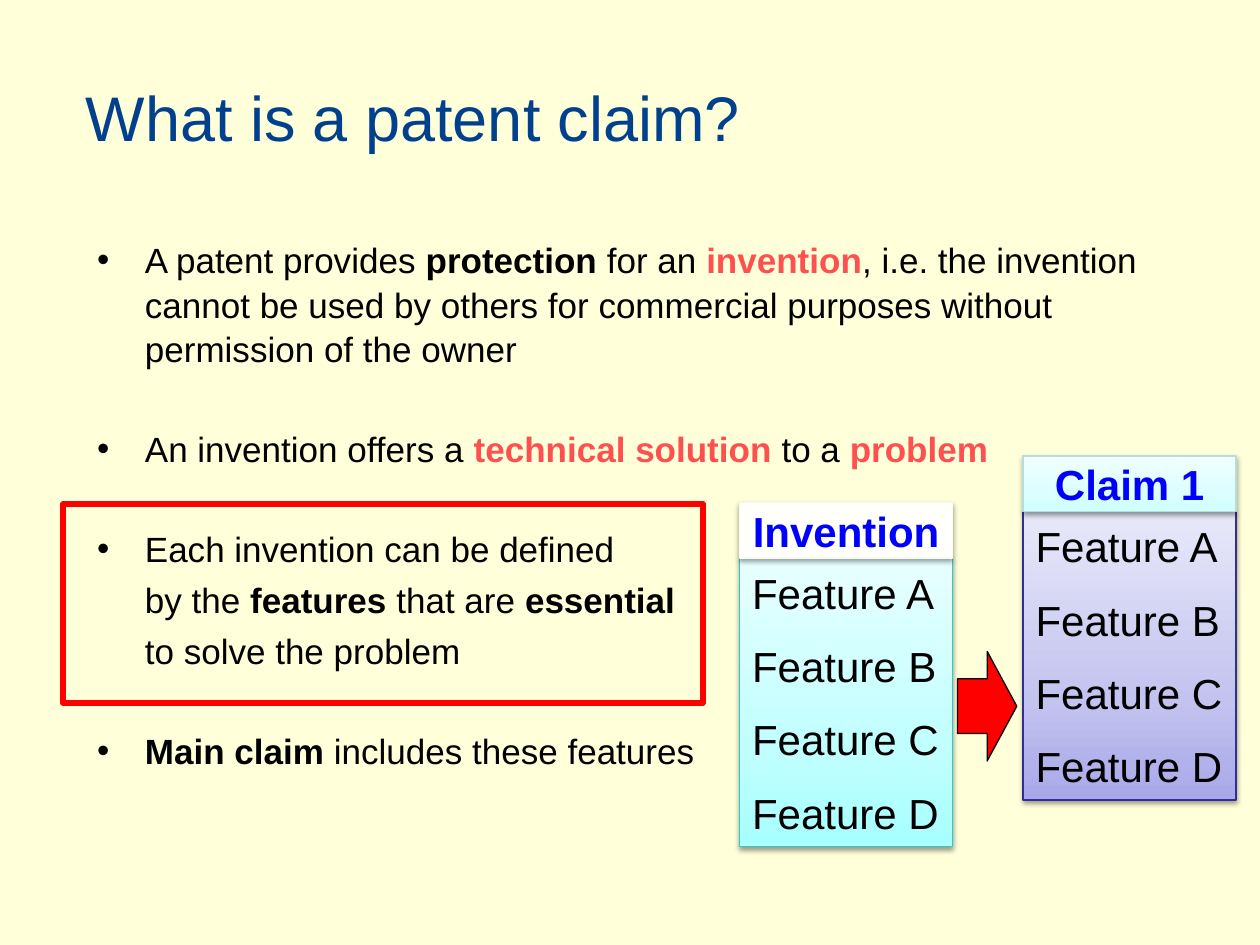
"""Build the slide that explains what a patent claim is."""
from lxml.etree import SubElement
from pptx import Presentation
from pptx.dml.color import RGBColor
from pptx.enum.shapes import MSO_SHAPE as Shape
from pptx.enum.text import MSO_ANCHOR as Anchor, MSO_AUTO_SIZE as AutoSize, PP_ALIGN as Align
from pptx.oxml import parse_xml
from pptx.oxml.ns import nsdecls, qn
from pptx.util import Inches, Pt

FONT = "Arial"
CREAM = RGBColor(0xFF, 0xFF, 0xD9)
NAVY = RGBColor(0x00, 0x40, 0x8C)
BLACK = RGBColor(0x00, 0x00, 0x00)
CORAL = RGBColor(0xFF, 0x50, 0x50)
RED = RGBColor(0xFF, 0x00, 0x00)
BLUE = RGBColor(0x00, 0x00, 0xFF)
VIOLET_EDGE = RGBColor(0x2F, 0x2F, 0x98)
ICE_EDGE = RGBColor(0xB6, 0xDC, 0xDF)
CYAN_EDGE = RGBColor(0x2E, 0xCB, 0xCB)
IVORY_EDGE = RGBColor(0xFA, 0xFA, 0xF1)

TITLE = "What is a patent claim?"
PLAIN, BOLD, KEY = (False, BLACK), (True, BLACK), (True, CORAL)
POINTS = [
    (True, [("A patent provides ", PLAIN), ("protection", BOLD), (" for an ", PLAIN),
            ("invention", KEY),
            (", i.e. the invention cannot be used by others for commercial purposes "
             "without permission of the owner", PLAIN)]),
    (True, [("An invention offers a ", PLAIN), ("technical solution", KEY),
            (" to a ", PLAIN), ("problem", KEY)]),
    (True, [("Each invention can be defined", PLAIN)]),
    (False, [("by the ", PLAIN), ("features ", BOLD), ("that are ", PLAIN),
             ("essential", BOLD)]),
    (False, [("to solve the problem", PLAIN)]),
    (True, [("Main claim ", BOLD), ("includes these features", PLAIN)]),
]
FEATURES = ["Feature A", "Feature B", "Feature C", "Feature D"]
CARD_WIDTH, HEADER_HEIGHT, LIST_HEIGHT = 1.69, 0.44, 2.29
CARDS = [
    {"heading": "Claim 1", "left": 8.12, "top": 3.62, "angle": 90,
     "header": ([(0, "F0FFFF"), (65, "DDFEFF"), (100, "CFFFFF")], ICE_EDGE),
     "list": ([(0, "E8E8FA"), (65, "C3C3EF"), (100, "A8A8EA")], VIOLET_EDGE)},
    {"heading": "Invention", "left": 5.87, "top": 3.99, "angle": 270,
     "header": ([(0, "FFFFFB"), (35, "FFFFFC"), (100, "FFFFFE")], IVORY_EDGE),
     "list": ([(0, "A7FFFF"), (35, "C1FFFF"), (100, "E7FFFF")], CYAN_EDGE)},
]


def place(shape, left, top, width, height):
    shape.left, shape.top = Inches(left), Inches(top)
    shape.width, shape.height = Inches(width), Inches(height)


def style(font, size, color, bold=False):
    font.name, font.size, font.bold = FONT, Pt(size), bold
    font.color.rgb = color


def outline(shape, color, width):
    shape.line.color.rgb = color
    shape.line.width = Pt(width)


def shade(panel, stops, angle):
    marks = "".join(f'<a:gs pos="{at * 1000}"><a:srgbClr val="{color}"/></a:gs>'
                    for at, color in stops)
    gradient = parse_xml(f'<a:gradFill {nsdecls("a")} rotWithShape="1"><a:gsLst>{marks}</a:gsLst>'
                         f'<a:lin ang="{angle * 60000}" scaled="0"/></a:gradFill>')
    panel._element.spPr.find(qn("a:prstGeom")).addnext(gradient)


def cast_shadow(panel):
    panel._element.spPr.append(parse_xml(
        f'<a:effectLst {nsdecls("a")}><a:outerShdw blurRad="{Pt(3.1)}" dist="{Pt(1.6)}" '
        'dir="5400000" rotWithShape="0"><a:srgbClr val="000000"><a:alpha val="38000"/>'
        '</a:srgbClr></a:outerShdw></a:effectLst>'))


def add_panel(group, box, look, angle, lines, align, color, bold):
    panel = group.shapes.add_shape(Shape.RECTANGLE, *map(Inches, box))
    stops, edge = look
    shade(panel, stops, angle)
    outline(panel, edge, 0.75)
    cast_shadow(panel)
    frame = panel.text_frame
    frame.text = "\n".join(lines)
    frame.word_wrap = False
    frame.vertical_anchor = Anchor.MIDDLE
    for index, paragraph in enumerate(frame.paragraphs):
        paragraph.alignment = align
        paragraph.space_before = Pt(13 if index else 0)
        for run in paragraph.runs:
            style(run.font, 24, color, bold)


def add_card(slide, card):
    group = slide.shapes.add_group_shape()
    left, top, angle = card["left"], card["top"], card["angle"]
    add_panel(group, (left, top + HEADER_HEIGHT, CARD_WIDTH, LIST_HEIGHT), card["list"],
              angle, FEATURES, Align.LEFT, BLACK, False)
    add_panel(group, (left, top, CARD_WIDTH, HEADER_HEIGHT), card["header"],
              angle, [card["heading"]], Align.CENTER, BLUE, True)


def fill_title(title):
    place(title, 0.58, 0.3, 9, 1.25)
    title.text_frame.text = TITLE
    title.text_frame.vertical_anchor = Anchor.MIDDLE
    heading = title.text_frame.paragraphs[0]
    heading.alignment = Align.LEFT
    style(heading.runs[0].font, 36, NAVY)


def fill_points(body):
    place(body, 0.67, 1.83, 9.08, 4.56)
    frame = body.text_frame
    frame.auto_size = AutoSize.NONE
    for index, (bulleted, parts) in enumerate(POINTS):
        paragraph = frame.add_paragraph() if index else frame.paragraphs[0]
        properties = paragraph._p.get_or_add_pPr()
        properties.set("marL", str(Inches(0.38)))
        properties.set("indent", str(-Inches(0.38) if bulleted else 0))
        if bulleted:
            SubElement(properties, qn("a:buChar")).set("char", "•")
        else:
            SubElement(properties, qn("a:buNone"))
        paragraph.line_spacing = 1.05
        paragraph.space_before = Pt(0 if index == 0 else 32 if bulleted else 4)
        for text, (bold, color) in parts:
            run = paragraph.add_run()
            run.text = text
            style(run.font, 20, color, bold)


def main():
    deck = Presentation()
    deck.slide_width, deck.slide_height = Inches(10), Inches(7.5)
    slide = deck.slides.add_slide(deck.slide_layouts[1])
    slide.background.fill.solid()
    slide.background.fill.fore_color.rgb = CREAM
    fill_title(slide.shapes.title)
    fill_points(slide.placeholders[1])

    claim, invention = CARDS
    add_card(slide, claim)
    frame = slide.shapes.add_shape(Shape.RECTANGLE, *map(Inches, (0.5, 4, 5.08, 1.58)))
    frame.shadow.inherit = False
    frame.fill.background()
    outline(frame, RED, 3)
    add_card(slide, invention)
    arrow = slide.shapes.add_shape(Shape.RIGHT_ARROW, *map(Inches, (7.6, 5.17, 0.47, 0.87)))
    arrow.shadow.inherit = False
    arrow.fill.solid()
    arrow.fill.fore_color.rgb = RED
    outline(arrow, BLACK, 0.75)
    deck.save("out.pptx")


if __name__ == "__main__":
    main()
